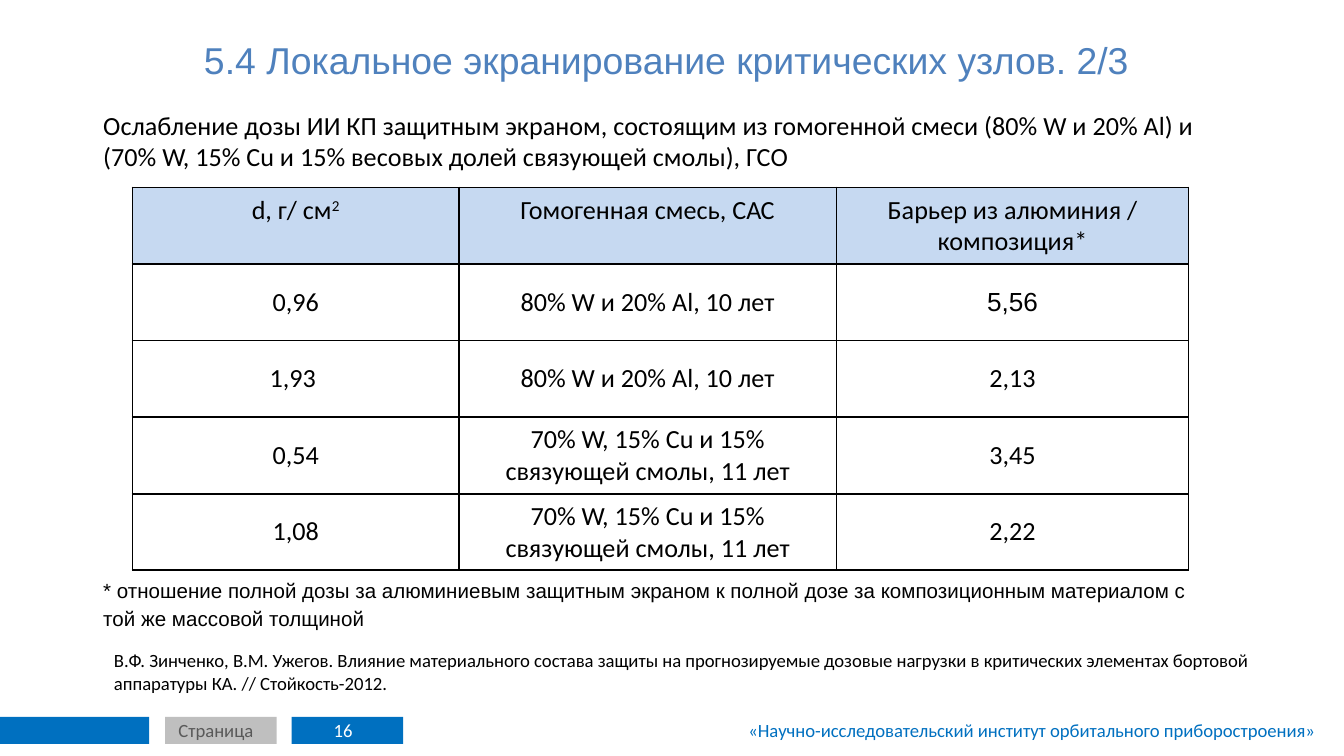
from lxml.etree import SubElement
from pptx import Presentation
from pptx.dml.color import RGBColor
from pptx.enum.shapes import MSO_SHAPE
from pptx.enum.text import MSO_ANCHOR, PP_ALIGN
from pptx.oxml.ns import qn
from pptx.util import Pt

PX = 4572  # 200 px to the inch
THEME = {
    "blue": RGBColor(0x00, 0x70, 0xC0),
    "grey": RGBColor(0xBF, 0xBF, 0xBF),
    "dark_grey": RGBColor(0x59, 0x59, 0x59),
    "title": RGBColor(0x4F, 0x81, 0xBD),
    "header": RGBColor(0xC6, 0xD9, 0xF1),
    "white": RGBColor(0xFF, 0xFF, 0xFF),
    "black": RGBColor(0x00, 0x00, 0x00),
    "title_size": Pt(20),
    "body_size": Pt(14),
    "note_size": Pt(11),
    "small_size": Pt(10),
}


def add_text(box, text, size, color="black", font="Calibri", align=PP_ALIGN.LEFT):
    sp = s.shapes.add_textbox(*(v * PX for v in box))
    tf = sp.text_frame
    tf.word_wrap = True
    p = tf.paragraphs[0]
    p.text = text
    p.alignment = align
    f = p.runs[0].font
    f.name, f.size, f.color.rgb = font, THEME[size], THEME[color]
    return tf


def set_borders(cell):
    """Draw a 1 pt black line on each side; call before setting the cell's fill."""
    tc_pr = cell._tc.get_or_add_tcPr()
    for side in ("lnL", "lnR", "lnT", "lnB"):
        ln = SubElement(tc_pr, qn(f"a:{side}"), w=str(Pt(1)))
        fill = SubElement(ln, qn("a:solidFill"))
        SubElement(fill, qn("a:srgbClr"), val=str(THEME["black"]))


prs = Presentation()
prs.slide_width, prs.slide_height = 2000 * PX, 1125 * PX
s = prs.slides.add_slide(prs.slide_layouts[6])

# Footer
for left, width, color in ((0, 222, "blue"), (246, 166, "grey"), (434, 166, "blue")):
    sp = s.shapes.add_shape(MSO_SHAPE.RECTANGLE, left * PX, 1067 * PX, width * PX, 40 * PX)
    sp.shadow.inherit = False
    sp.fill.solid()
    sp.fill.fore_color.rgb = THEME[color]
    sp.line.fill.background()

add_text((477, 1060, 388, 54), "16", "small_size", "white")
add_text((246, 1060, 166, 54), "Страница", "small_size", "dark_grey")
add_text((748, 1060, 1228, 54),
         "«Научно-исследовательский институт орбитального приборостроения»",
         "small_size", "blue", align=PP_ALIGN.RIGHT)

# Title and introduction
add_text((100, 46, 1800, 124), "5.4 Локальное экранирование критических узлов. 2/3 ",
         "title_size", "title", "Arial", PP_ALIGN.CENTER)
add_text((134, 153, 1740, 208),
         "Ослабление дозы ИИ КП защитным экраном, состоящим из гомогенной смеси "
         "(80% W и 20% Al) и (70% W, 15% Cu и 15% весовых долей связующей смолы), ГСО",
         "body_size")

# Dose attenuation table
aluminium_mix = "80% W и 20% Al, 10 лет"
resin_mix = "70% W, 15% Cu и 15% связующей смолы, 11 лет"
rows = [
    ("d, г/ см", "Гомогенная смесь, САС", "Барьер из алюминия / композиция*"),
    ("0,96", aluminium_mix, "5,56"),
    ("1,93 ", aluminium_mix, "2,13"),
    ("0,54", resin_mix, "3,45"),
    ("1,08", resin_mix, "2,22"),
]
col_widths = (486, 562, 524)
row_height = 114
table = s.shapes.add_table(len(rows), len(col_widths), 197 * PX, 279 * PX,
                           sum(col_widths) * PX, len(rows) * row_height * PX).table
table.first_row = table.horz_banding = False
for col, width in zip(table.columns, col_widths):
    col.width = width * PX

for i, row in enumerate(rows):
    for j, text in enumerate(row):
        cell = table.cell(i, j)
        set_borders(cell)
        if i == 0:
            cell.fill.solid()
            cell.fill.fore_color.rgb = THEME["header"]
        else:
            cell.fill.background()
            cell.vertical_anchor = MSO_ANCHOR.MIDDLE
        p = cell.text_frame.paragraphs[0]
        p.text = text
        p.alignment = PP_ALIGN.CENTER
        if (i, j) == (0, 0):
            r = p.add_run()
            r.text = "2"
            r._r.get_or_add_rPr().set("baseline", "30000")
        for r in p.runs:
            r.font.name = "Arial" if text == "5,56" else "Calibri"
            r.font.size = THEME["body_size"]
            r.font.color.rgb = THEME["black"]

# Footnote and reference
tf = add_text((134, 846, 1686, 102),
              "* отношение полной дозы за алюминиевым защитным экраном к полной дозе "
              "за композиционным материалом с той же массовой толщиной",
              "note_size", font="Arial")
tf.vertical_anchor = MSO_ANCHOR.MIDDLE
tf.paragraphs[0].line_spacing = 1.14
add_text((150, 956, 1732, 88),
         "В.Ф. Зинченко, В.М. Ужегов. Влияние материального состава защиты на "
         "прогнозируемые дозовые нагрузки в критических элементах бортовой "
         "аппаратуры КА. // Стойкость-2012.", "small_size")

prs.save("out.pptx")
